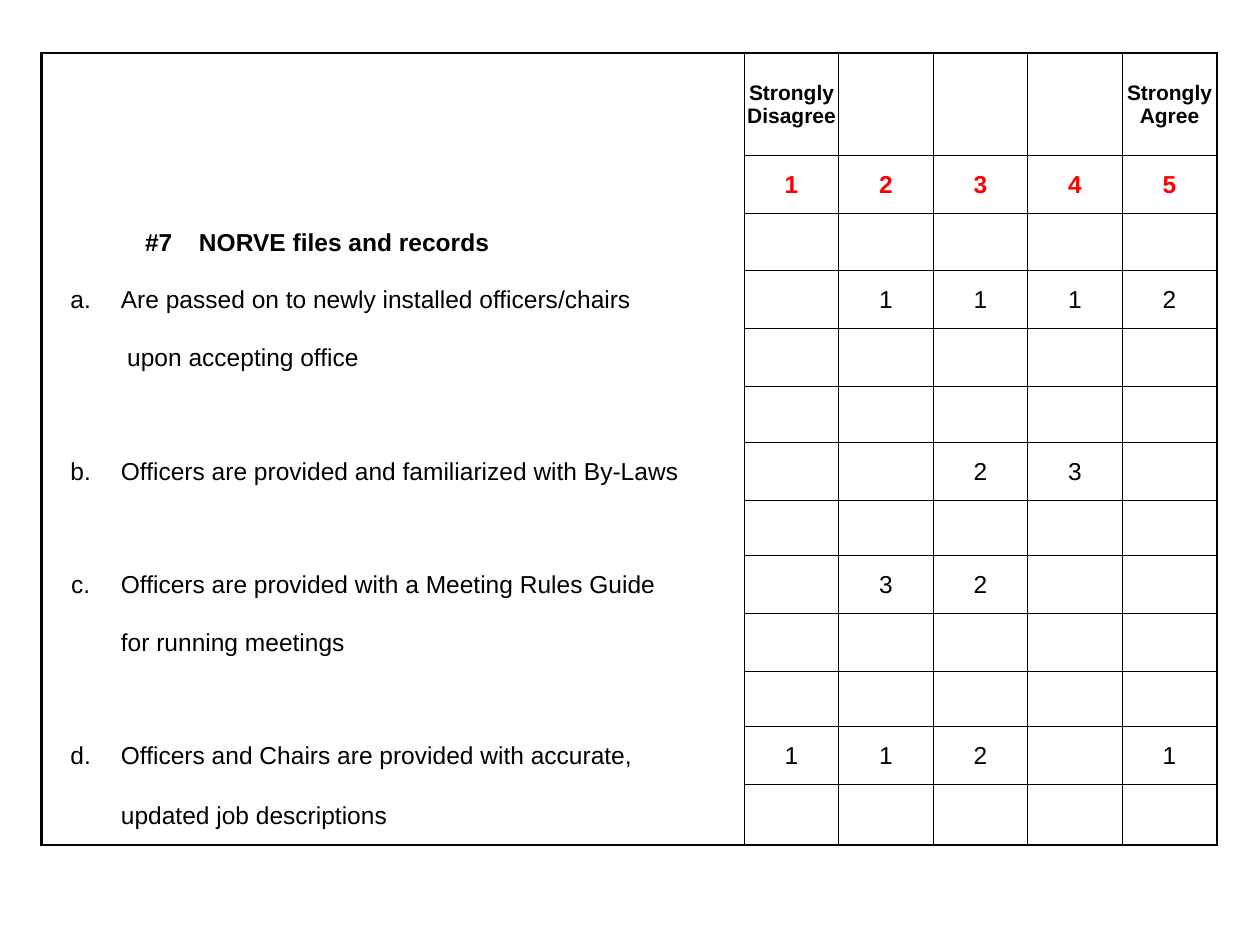
from lxml import etree
from pptx import Presentation
from pptx.dml.color import RGBColor
from pptx.enum.text import MSO_ANCHOR, PP_ALIGN
from pptx.oxml.ns import qn
from pptx.util import Inches, Pt

LEFT, CENTER = PP_ALIGN.LEFT, PP_ALIGN.CENTER
MIDDLE = MSO_ANCHOR.MIDDLE
COLORS = {"ink": "000000", "score": "FF0000"}
FONT = "Arial"
THIN, THICK = 0.5, 1.5

LABEL_COLS, SCORE_COLS = 9, 5
LABEL_W, SCORE_W = 0.62, 0.75
HEAD_H, ROW_H, GAP_H, LAST_H = 0.81, 0.46, 0.44, 0.48

# Marker, statement, columns the statement spans, scores from 1 to 5
ITEMS = [
    ("a.", "Are passed on to newly installed officers/chairs", 8, ["", "1", "1", "1", "2"]),
    ("", "upon accepting office", 4, []),
    None,
    ("b.", "Officers are provided and familiarized with By-Laws", 8, ["", "", "2", "3", ""]),
    None,
    ("c.", "Officers are provided with a Meeting Rules Guide", 8, ["", "3", "2", "", ""]),
    ("", "for running meetings", 3, []),
    None,
    ("d.", "Officers and Chairs are provided with accurate,", 8, ["1", "1", "2", "", "1"]),
    ("", "updated job descriptions", 8, []),
]
FIRST_ITEM = 3
INDENTED = "upon accepting office"


def write(cell, text, size=14, bold=False, color="ink", align=CENTER, indent=0.01):
    cell.margin_left = Inches(indent)
    p = cell.text_frame.paragraphs[0]
    p.alignment = align
    r = p.add_run()
    r.text = text
    r.font.name = FONT
    r.font.size = Pt(size)
    r.font.bold = bold
    r.font.color.rgb = RGBColor.from_string(COLORS[color])


def set_borders(cell, widths):
    """Draw the left, right, top and bottom borders; a width of 0 hides one."""
    tc_pr = cell._tc.get_or_add_tcPr()
    for i, (side, width) in enumerate(zip("LRTB", widths)):
        ln = etree.Element(qn(f"a:ln{side}"), w=str(Pt(width)))
        if width:
            fill = etree.SubElement(ln, qn("a:solidFill"))
            etree.SubElement(fill, qn("a:srgbClr"), val=COLORS["ink"])
        else:
            etree.SubElement(ln, qn("a:noFill"))
        tc_pr.insert(i, ln)


class SurveySlide:
    def __init__(self, prs):
        self.slide = prs.slides.add_slide(prs.slide_layouts[6])

    def add_grid(self, left, top, col_widths, row_heights):
        frame = self.slide.shapes.add_table(
            len(row_heights), len(col_widths), Inches(left), Inches(top),
            Inches(sum(col_widths)), Inches(sum(row_heights)))
        table = frame.table
        table.first_row = table.horz_banding = False
        for col, width in zip(table.columns, col_widths):
            col.width = Inches(width)
        for row, height in zip(table.rows, row_heights):
            row.height = Inches(height)
        for cell in table.iter_cells():
            cell.fill.background()
            cell.vertical_anchor = MIDDLE
            cell.margin_left = cell.margin_right = cell.margin_top = Inches(0.01)
            cell.margin_bottom = 0
        return table

    def add_scores(self, table, row, scores, **fmt):
        for col, score in enumerate(scores, LABEL_COLS):
            if score:
                write(table.cell(row, col), score, **fmt)

    def add_statement(self, table, row, col, text, span, **fmt):
        cell = table.cell(row, col)
        cell.merge(table.cell(row, col + span - 1))
        write(cell, text, align=LEFT, **fmt)

    def add_borders(self, table):
        """Rule the score cells thinly and frame the whole table thickly."""
        last_row, last_col = len(table.rows) - 1, len(table.columns) - 1
        for row in range(last_row + 1):
            for col in range(last_col + 1):
                cell = table.cell(row, col)
                inner = THIN if col >= LABEL_COLS else 0
                end = col + (cell.span_width - 1 if cell.is_merge_origin else 0)
                set_borders(cell, (
                    THICK if col == 0 else inner,
                    THICK if end == last_col else THIN if end >= LABEL_COLS - 1 else 0,
                    THICK if row == 0 else inner,
                    THICK if row == last_row else inner))


def main():
    prs = Presentation()
    prs.slide_width, prs.slide_height = Inches(10), Inches(7.5)
    s = SurveySlide(prs)

    item_heights = [ROW_H if item else GAP_H for item in ITEMS[:-1]]
    table = s.add_grid(
        0.33, 0.42,
        [LABEL_W] * LABEL_COLS + [SCORE_W] * SCORE_COLS,
        [HEAD_H, ROW_H, ROW_H] + item_heights + [LAST_H])

    s.add_scores(table, 0, ["Strongly Disagree", "", "", "", "Strongly Agree"],
                 size=12, bold=True)
    s.add_scores(table, 1, "12345", bold=True, color="score")
    write(table.cell(2, 1), "#7", bold=True)
    s.add_statement(table, 2, 2, "NORVE files and records", 7, bold=True)

    for row, item in enumerate(ITEMS, FIRST_ITEM):
        if item is None:
            continue
        marker, text, span, scores = item
        if marker:
            write(table.cell(row, 0), marker)
        s.add_statement(table, row, 1, text, span, indent=0.06 if text == INDENTED else 0.01)
        s.add_scores(table, row, scores)

    s.add_borders(table)
    prs.save("out.pptx")


if __name__ == "__main__":
    main()
